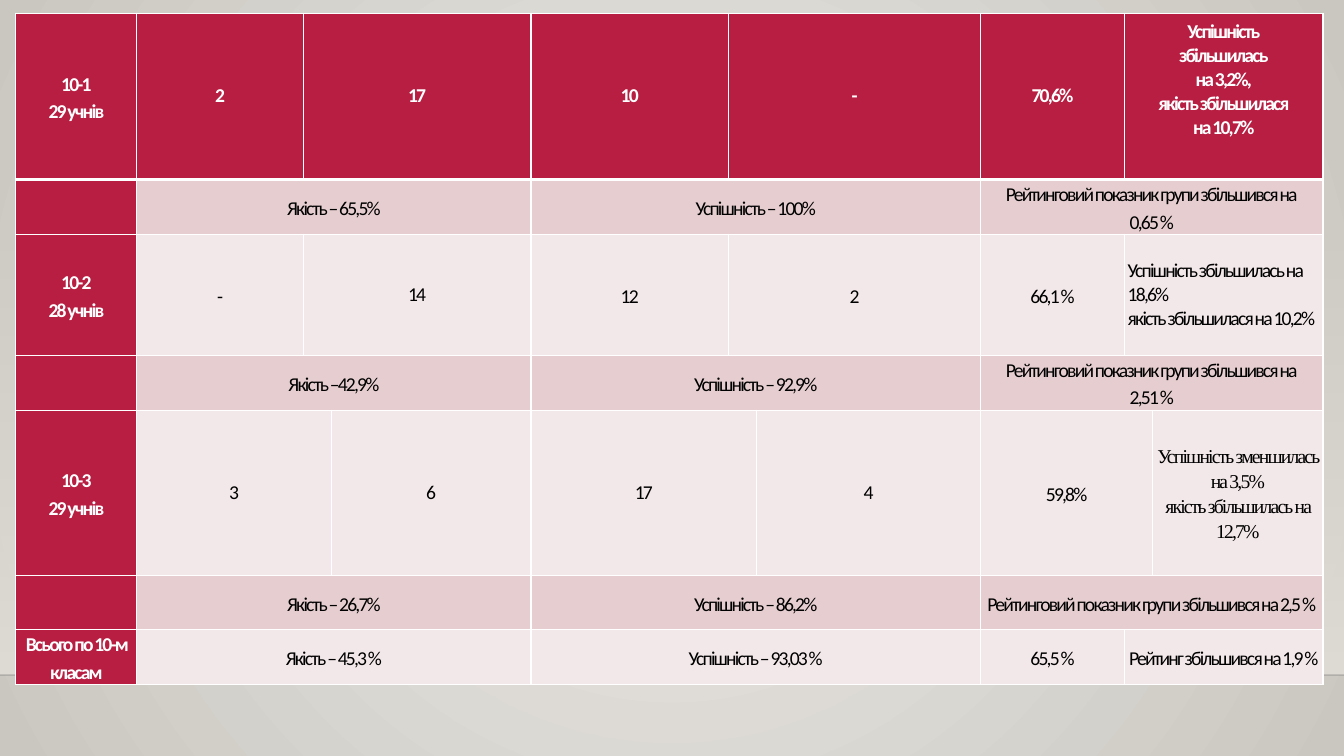
from lxml import etree
from pptx import Presentation
from pptx.dml.color import RGBColor
from pptx.enum.shapes import MSO_CONNECTOR, MSO_SHAPE
from pptx.enum.text import MSO_ANCHOR, PP_ALIGN
from pptx.oxml import parse_xml
from pptx.oxml.ns import nsdecls, qn
from pptx.util import Cm, Pt

RECTANGLE = MSO_SHAPE.RECTANGLE
STRAIGHT = MSO_CONNECTOR.STRAIGHT
MIDDLE = MSO_ANCHOR.MIDDLE
LEFT, CENTER = PP_ALIGN.LEFT, PP_ALIGN.CENTER

THEME = {
    "crimson": "B71E42", "rose": "E6CDCF", "pale": "F3E8E9",
    "white": "FFFFFF", "black": "000000",
    "glow": "ECEAE7", "edge": "CAC7C1", "wall": "DFDBD5", "floor": "000001",
    "font": "Calibri", "serif": "Times New Roman",
    "size": Pt(14), "tracking": "-130", "leading": 1.15,
}

COLUMN_WIDTHS = [3.05, 4.19, 0.71, 5.03, 4.98, 0.71, 5.64, 3.63, 0.71, 4.29]
ROW_HEIGHTS = [4.19, 1.36, 3.05, 1.36, 4.17, 1.36, 1.36]

ROWS = [
    [(0, 1, "10-1\n29 учнів"), (1, 1, "2"), (2, 2, "17"), (4, 1, "10"),
     (5, 2, "-"), (7, 1, "70,6%"),
     (8, 2, "Успішність\nзбільшилась\nна 3,2%,\nякість збільшилася\nна 10,7%")],
    [(1, 3, "Якість – 65,5%"), (4, 3, "Успішність – 100%"),
     (7, 3, "Рейтинговий показник групи збільшився на\n0,65 %")],
    [(0, 1, "10-2\n28 учнів"), (1, 1, "-"), (2, 2, "14"), (4, 1, "12"),
     (5, 2, "2"), (7, 1, "66,1 %"),
     (8, 2, "Успішність збільшилась на 18,6%\nякість збільшилася на 10,2%")],
    [(1, 3, "Якість –42,9%"), (4, 3, "Успішність – 92,9%"),
     (7, 3, "Рейтинговий показник групи збільшився на\n2,51 %")],
    [(0, 1, "10-3\n29 учнів"), (1, 2, "3"), (3, 1, "6"), (4, 2, "17"),
     (6, 1, "4"), (7, 2, "59,8%"),
     (9, 1, "Успішність зменшилась на 3,5%\nякість збільшилась на 12,7%")],
    [(1, 3, "Якість – 26,7%"), (4, 3, "Успішність – 86,2%"),
     (7, 3, "Рейтинговий показник групи збільшився на 2,5 %")],
    [(0, 1, "Всього по 10-м класам"), (1, 3, "Якість – 45,3 %"),
     (4, 3, "Успішність – 93,03 %"), (7, 1, "65,5 %"),
     (8, 2, "Рейтинг збільшився на 1,9 %")],
]
SINGLE_SPACED = {0: (1, 2, 4, 5, 7, 8), 2: (2, 8), 4: (1, 3, 4, 6)}
LEFT_ALIGNED = (2, 8)
SERIF = (4, 9)
RAISED = (0, 8)


def color(name):
    return RGBColor.from_string(THEME[name])


def set_gradient(fill, first, last):
    fill.gradient()
    for stop, name in zip(fill.gradient_stops, (first, last)):
        stop.color.rgb = color(name)


deck = Presentation()
deck.slide_width, deck.slide_height = Cm(33.87), Cm(19.05)
page = deck.slides.add_slide(deck.slide_layouts[6])

set_gradient(page.background.fill, "glow", "edge")
linear = next(page.element.iter(qn("a:lin")))
linear.getparent().replace(linear, parse_xml(
    f'<a:path {nsdecls("a")} path="circle">'
    '<a:fillToRect l="50000" t="50000" r="50000" b="50000"/></a:path>'))

wall = page.shapes.add_shape(RECTANGLE, 0, Cm(5.61), deck.slide_width, Cm(11.4))
wall.shadow.inherit = False
wall.line.fill.background()
set_gradient(wall.fill, "wall", "wall")
wall.fill.gradient_angle = 270
clear_stop = next(wall.element.spPr.iter(qn("a:srgbClr")))
etree.SubElement(clear_stop, qn("a:alpha")).set("val", "0")

floor = page.shapes.add_connector(STRAIGHT, 0, Cm(17.01), deck.slide_width, Cm(17.01))
floor.line.width = Pt(1)
floor.line.color.rgb = color("floor")
floor_color = next(floor.element.spPr.iter(qn("a:srgbClr")))
etree.SubElement(floor_color, qn("a:alpha")).set("val", "20000")
etree.SubElement(floor.element.spPr, qn("a:effectLst"))

grid = page.shapes.add_table(
    len(ROW_HEIGHTS), len(COLUMN_WIDTHS), Cm(0.4), Cm(0.33),
    Cm(sum(COLUMN_WIDTHS)), Cm(sum(ROW_HEIGHTS))).table
for column, width in zip(grid.columns, COLUMN_WIDTHS):
    column.width = Cm(width)
for row, height in zip(grid.rows, ROW_HEIGHTS):
    row.height = Cm(height)

for r in range(len(ROW_HEIGHTS)):
    for c in range(len(COLUMN_WIDTHS)):
        cell = grid.cell(r, c)
        properties = cell._tc.get_or_add_tcPr()
        for side in "LRTB":
            thick = (r, side) in ((0, "B"), (1, "T"))
            properties.append(parse_xml(
                f'<a:ln{side} {nsdecls("a")} w="{Pt(3 if thick else 1)}"><a:solidFill>'
                f'<a:srgbClr val="{THEME["white"]}"/></a:solidFill></a:ln{side}>'))
        cell.fill.solid()
        tint = "rose" if r % 2 else "pale"
        cell.fill.fore_color.rgb = color("crimson" if r == 0 or c == 0 else tint)

for r, entries in enumerate(ROWS):
    for c, span_count, text in entries:
        cell = grid.cell(r, c)
        if span_count > 1:
            cell.merge(grid.cell(r, c + span_count - 1))
        cell.vertical_anchor = MIDDLE
        cell.margin_left = cell.margin_right = Cm(0.08)
        cell.margin_top = 0
        cell.margin_bottom = Cm(0.84) if (r, c) == RAISED else 0
        cell.text_frame.text = text
        heading = r == 0 or c == 0
        for para in cell.text_frame.paragraphs:
            para.alignment = LEFT if (r, c) == LEFT_ALIGNED else CENTER
            para.line_spacing = 1.0 if c in SINGLE_SPACED.get(r, ()) else THEME["leading"]
            for span in para.runs:
                span.font.name = THEME["serif" if (r, c) == SERIF else "font"]
                span.font.size = THEME["size"]
                span.font.bold = heading
                span.font.color.rgb = color("white" if heading else "black")
                span._r.get_or_add_rPr().set("spc", THEME["tracking"])

deck.save("out.pptx")
